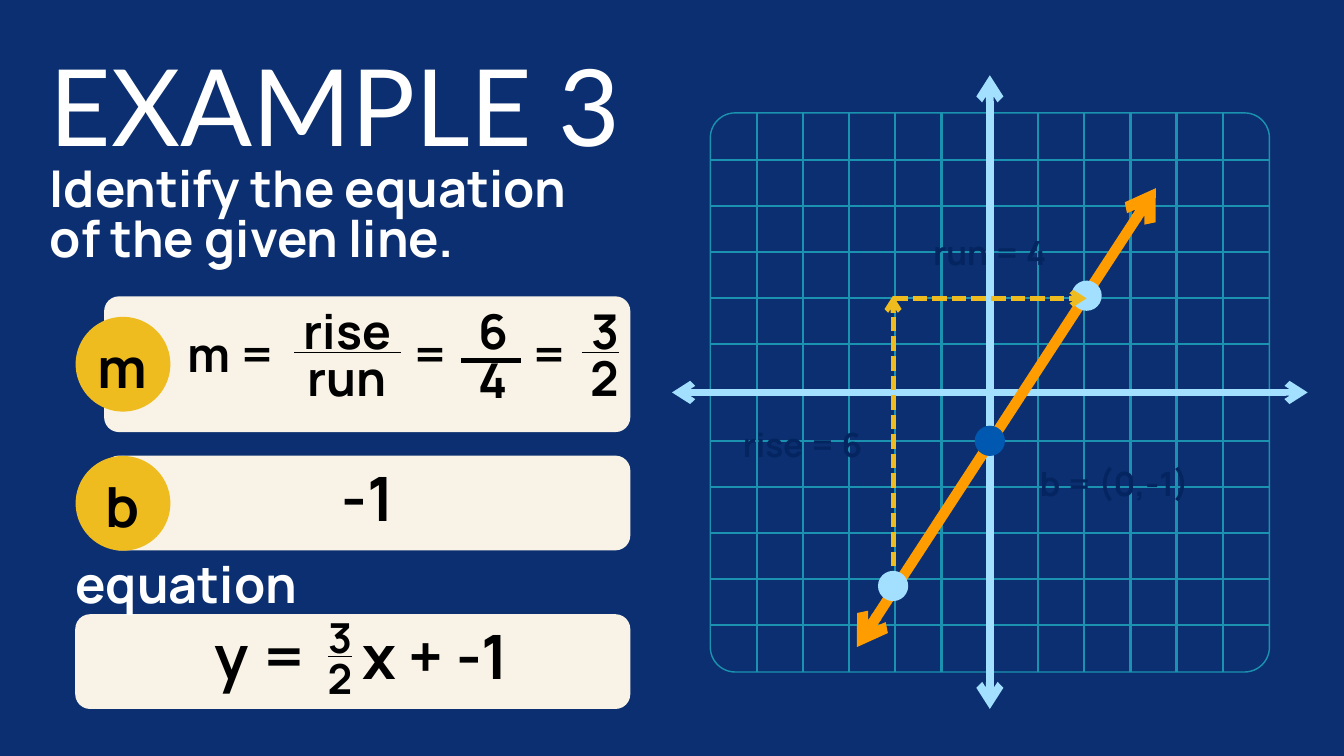
from lxml import etree
from pptx import Presentation
from pptx.dml.color import RGBColor
from pptx.enum import dml, shapes, text
from pptx.oxml import ns
from pptx import util as u

COLUMNS, ROWS = 20, 11.25

NAVY = RGBColor(0x0B, 0x2F, 0x70)
TEAL = RGBColor(0x1B, 0x93, 0xB0)
SKY = RGBColor(0xA3, 0xDF, 0xFF)
ORANGE = RGBColor(0xFF, 0x9C, 0x00)
BLUE = RGBColor(0x00, 0x58, 0xB0)
CREAM = RGBColor(0xF8, 0xF3, 0xE6)
GOLD = RGBColor(0xEF, 0xBC, 0x20)
INK = RGBColor(0x04, 0x25, 0x60)
WHITE = RGBColor(0xFF, 0xFF, 0xFF)
BLACK = RGBColor(0, 0, 0)

LEFT, CENTER, RIGHT = text.PP_ALIGN.LEFT, text.PP_ALIGN.CENTER, text.PP_ALIGN.RIGHT

# Coordinate plane: origin, frame, unit of the plotted points, gap of the ruling
ORIGIN_X, ORIGIN_Y = 14.73, 5.84
HALF = 4.16
UNIT = 0.72
RULING = 0.686
RULED = 5


def plane(x, y):
    """Turn graph coordinates into slide columns and rows."""
    return ORIGIN_X + x * UNIT, ORIGIN_Y - y * UNIT


class Board:
    heading_font = "Lato"
    body_font = "Manrope"

    def __init__(self, prs):
        self.col = prs.slide_width / COLUMNS
        self.row = prs.slide_height / ROWS
        self.slide = prs.slides.add_slide(prs.slide_layouts[5])
        fill = self.slide.background.fill
        fill.solid()
        fill.fore_color.rgb = NAVY

    def box(self, x, y, w, h):
        return int(x * self.col), int(y * self.row), int(w * self.col), int(h * self.row)

    def set_text(self, tf, lines, size, leading, color, align, font, bold=True, underline=()):
        frame = dict(word_wrap=True, auto_size=text.MSO_AUTO_SIZE.SHAPE_TO_FIT_TEXT,
                     vertical_anchor=text.MSO_ANCHOR.TOP, margin_left=0,
                     margin_right=0, margin_top=0, margin_bottom=0)
        for name, value in frame.items():
            setattr(tf, name, value)
        for i, line in enumerate(lines):
            p = tf.add_paragraph() if i else tf.paragraphs[0]
            p.alignment = align
            p.line_spacing = u.Pt(leading)
            p.space_before = u.Pt(0)
            r = p.add_run()
            r.text = line
            style = dict(name=font, size=u.Pt(size), bold=bold, underline=i in underline)
            for name, value in style.items():
                setattr(r.font, name, value)
            r.font.color.rgb = color

    def title(self, words, box, size, leading):
        sp = self.slide.shapes.title
        sp.left, sp.top, sp.width, sp.height = self.box(*box)
        self.set_text(sp.text_frame, [words], size, leading, WHITE, LEFT,
                      self.heading_font, bold=False)

    def label(self, words, box, size, leading, color=BLACK, align=CENTER):
        sp = self.slide.shapes.add_textbox(*self.box(*box))
        self.set_text(sp.text_frame, [words], size, leading, color, align, self.body_font)

    def fraction(self, top, bottom, box, size, leading, align):
        """Stack two lines, the upper one underlined as the fraction bar."""
        sp = self.slide.shapes.add_textbox(*self.box(*box))
        self.set_text(sp.text_frame, [top, bottom], size, leading, BLACK, align,
                      self.body_font, underline=(0,))

    def shape(self, kind, box, fill=None):
        sp = self.slide.shapes.add_shape(kind, *self.box(*box))
        sp.shadow.inherit = False
        sp.line.fill.background()
        if fill is None:
            sp.fill.background()
        else:
            sp.fill.solid()
            sp.fill.fore_color.rgb = fill
        return sp

    def card(self, box, fill=CREAM, radius=0.22):
        sp = self.shape(shapes.MSO_SHAPE.ROUNDED_RECTANGLE, box, fill)
        sp.adjustments[0] = radius / min(box[2:])
        return sp

    def disc(self, center, size, fill):
        x, y = center
        self.shape(shapes.MSO_SHAPE.OVAL, (x - size / 2, y - size / 2, size, size), fill)

    def line(self, start, end, color, width, arrows=(), dashed=False):
        cx = self.slide.shapes.add_connector(
            shapes.MSO_CONNECTOR.STRAIGHT, *self.box(*start, *end))
        cx.line.color.rgb = color
        cx.line.width = u.Pt(width)
        if dashed:
            cx.line.dash_style = dml.MSO_LINE.SQUARE_DOT
        ln = cx.line._get_or_add_ln()
        for end_name in arrows:
            etree.SubElement(ln, ns.qn("a:" + end_name), type="arrow")
        etree.SubElement(cx._element.spPr, ns.qn("a:effectLst"))


def draw_graph(board):
    left, right = ORIGIN_X - HALF, ORIGIN_X + HALF
    top, bottom = ORIGIN_Y - HALF, ORIGIN_Y + HALF
    both = ("headEnd", "tailEnd")

    for side in (-1, 1):
        for i in range(RULED):
            shift = side * (UNIT + i * RULING)
            board.line((left, ORIGIN_Y + shift), (right, ORIGIN_Y + shift), TEAL, 2.37)
            board.line((ORIGIN_X + shift, bottom), (ORIGIN_X + shift, top), TEAL, 2.37)
    frame = board.card((left, top, 2 * HALF, 2 * HALF), fill=None, radius=0.37)
    frame.line.color.rgb = TEAL
    frame.line.width = u.Pt(1.5)

    board.line((ORIGIN_X, 10.55), (ORIGIN_X, 1.12), SKY, 8.3, both)
    board.line((19.46, ORIGIN_Y), (10, ORIGIN_Y), SKY, 7.12, both)
    board.line((17.2, 2.8), (12.75, 9.63), ORANGE, 11.25, both)

    low, corner, high = plane(-2, -4), plane(-2, 2), plane(2, 2)
    board.disc(plane(0, -1), 0.45, BLUE)
    board.line(low, corner, GOLD, 5.25, ("tailEnd",), dashed=True)
    board.disc(high, 0.45, SKY)
    board.line((corner[0], 4.44), (high[0], 4.44), GOLD, 5.25, ("tailEnd",), dashed=True)
    board.disc(low, 0.45, SKY)

    for words, box in (("rise = 6", (10.88, 6.21, 2.13, 0.69)),
                       ("run = 4", (13.6, 3.36, 2.26, 0.69)),
                       ("b = (0,-1)", (15.26, 6.79, 2.65, 0.69))):
        board.label(words, box, 35.6, 49.9, INK)


def draw_answers(board):
    for letter, card_top, card_height, center in (("m", 4.41, 2.02, 5.42),
                                                  ("b", 6.78, 1.41, 7.49)):
        board.card((1.55, card_top, 7.83, card_height))
        board.disc((1.83, center), 1.41, GOLD)
        board.label(letter, (1.36, center - 0.63, 0.93, 1.12), 59.3, 83.1)

    slope = dict(size=51.4, leading=50.3)
    for words, box, align in (("m =", (2.68, 4.99, 1.53, 0.79), CENTER),
                              ("=", (6.13, 4.99, 0.56, 0.79), CENTER),
                              ("6", (7.05, 4.65, 0.59, 0.8), CENTER),
                              ("4", (6.89, 5.38, 0.9, 0.8), CENTER),
                              ("=", (7.9, 4.99, 0.55, 0.8), RIGHT)):
        board.label(words, box, align=align, **slope)
    board.fraction(" rise ", "run", (4.34, 4.65, 1.66, 1.49), align=CENTER, **slope)
    board.fraction(" 3 ", "2", (8.59, 4.64, 0.62, 1.5), align=RIGHT, **slope)
    board.line((6.86, 5.36), (7.76, 5.36), BLACK, 5.25)

    board.label("-1", (3.94, 7.05, 3.06, 1.01), 65.5, 64.2)

    board.card((1.12, 9.14, 8.26, 1.41))
    board.label("equation", (1.12, 8.08, 4.06, 1.07), 54.3, 76, WHITE, LEFT)
    board.label("y =", (2.63, 9.4, 1.94, 1.03), 65.5, 64.2, align=RIGHT)
    board.fraction("3", "2", (4.72, 9.25, 0.52, 1.3), 44.3, 43.4, RIGHT)
    board.label("x + -1", (5.4, 9.4, 2.36, 1.03), 65.5, 64.2, align=LEFT)


def main():
    prs = Presentation()
    prs.slide_width, prs.slide_height = u.Inches(COLUMNS), u.Inches(ROWS)
    board = Board(prs)
    draw_graph(board)
    board.title("EXAMPLE 3", (0.74, 1.01, 8.65, 1.61), 114.2, 107.3)
    board.label("Identify the equation of the given line.",
                (0.74, 2.5, 8.47, 1.55), 54.3, 53.2, WHITE, LEFT)
    draw_answers(board)
    prs.save("out.pptx")


if __name__ == "__main__":
    main()
